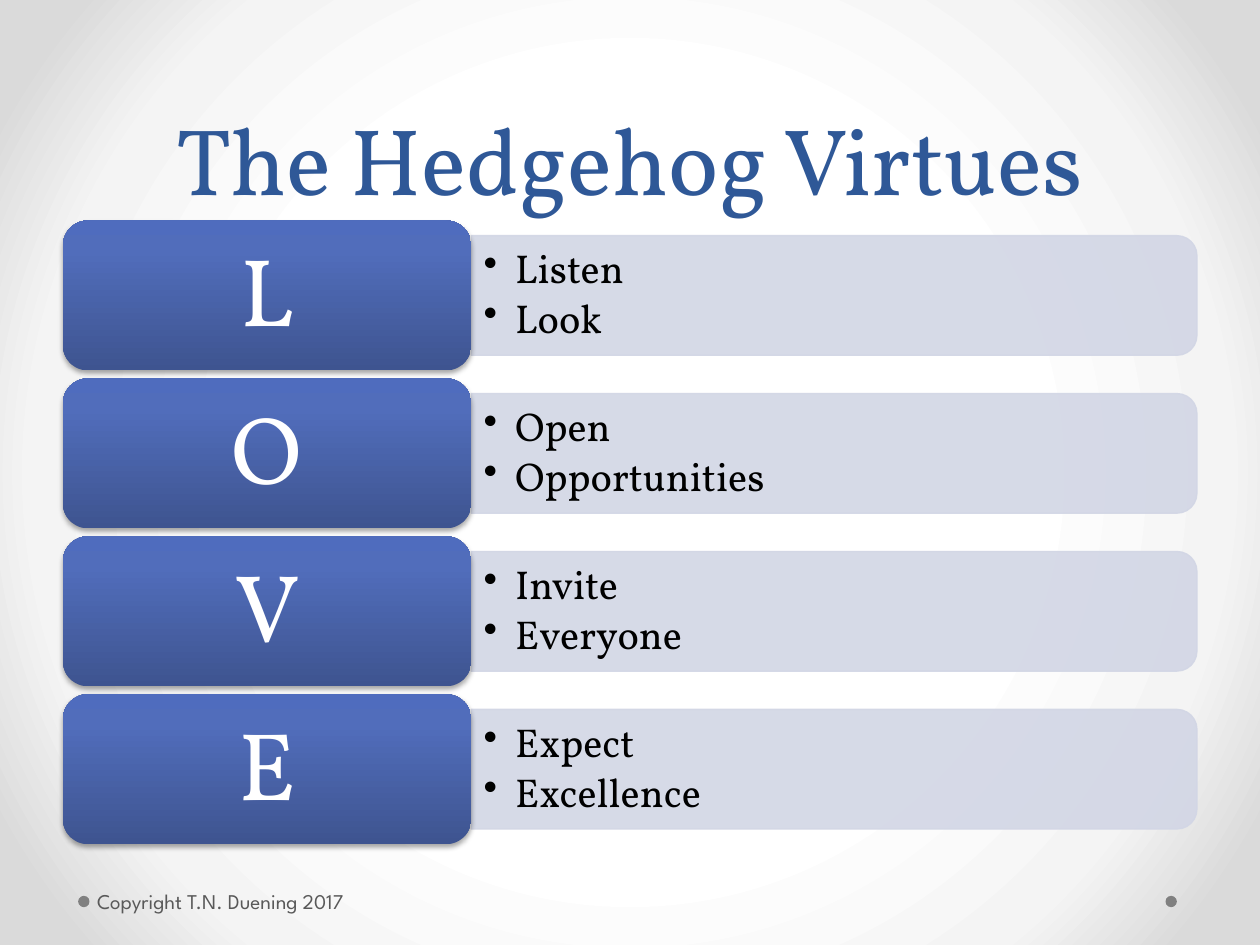
from pptx import Presentation
from pptx.dml.color import RGBColor
from pptx.enum.shapes import MSO_SHAPE as Shape
from pptx.enum.text import MSO_ANCHOR as Anchor, PP_ALIGN as Align
from pptx.oxml import parse_xml
from pptx.oxml.ns import nsdecls, qn
from pptx.util import Inches, Pt

THEME = {
    "serif": "Vollkorn", "sans": "League Spartan",
    "title": "2F5897", "letter": "FFFFFF", "word": "000000",
    "footer": "595959", "dot": "808080", "panel": "D2D6E5",
    "title_size": 54, "letter_size": 55, "word_size": 23, "footer_size": 12,
    "block_stops": [(0, "3E5490"), (80, "516DBB"), (100, "4F6CBE")],
    "back_stops": [(50, "FFFFFF"), (76, "F4F4F4"), (92, "DADADA")],
}
VIRTUES = {
    "L": ["Listen", "Look"],
    "O": ["Open", "Opportunities"],
    "V": ["Invite", "Everyone"],
    "E": ["Expect", "Excellence"],
}


def set_gradient(fill, owner, stops, direction):
    """Give the first fill inside owner any stops and a linear or path direction."""
    fill.gradient()
    gradient = owner.find(".//" + qn("a:gradFill"))
    stop_xml = "".join(
        f'<a:gs pos="{pos * 1000}"><a:srgbClr val="{color}"/></a:gs>' for pos, color in stops)
    gradient.getparent().replace(gradient, parse_xml(
        f'<a:gradFill {nsdecls("a")} rotWithShape="1"><a:gsLst>{stop_xml}</a:gsLst>'
        f'{direction}</a:gradFill>'))


def write(frame, lines, role, face, insets, anchor, align=Align.LEFT, **spacing):
    """Fill a text frame, one paragraph a line, in the theme's style for the role."""
    frame.word_wrap = True
    frame.vertical_anchor = anchor
    for side, inset in zip(("left", "top", "right", "bottom"), insets):
        setattr(frame, f"margin_{side}", Inches(inset))
    for number, line in enumerate(lines):
        paragraph = frame.add_paragraph() if number else frame.paragraphs[0]
        paragraph.alignment = align
        for name, value in spacing.items():
            setattr(paragraph, name, value)
        run = paragraph.add_run()
        run.text = line
        run.font.name = THEME[face]
        run.font.size = Pt(THEME[f"{role}_size"])
        run.font.color.rgb = RGBColor.from_string(THEME[role])


deck = Presentation()
deck.slide_width, deck.slide_height = Inches(10), Inches(7.5)
slide = deck.slides.add_slide(deck.slide_layouts[5])
shapes = slide.shapes
set_gradient(slide.background.fill, slide.element, THEME["back_stops"],
             '<a:path path="circle"><a:fillToRect l="50000" t="50000" r="50000" b="50000"/></a:path>')

for dot_left in (9.25, 0.62):
    dot = shapes.add_shape(Shape.OVAL, Inches(dot_left), Inches(7.11), Inches(0.09), Inches(0.09))
    dot.shadow.inherit = False
    dot.fill.solid()
    dot.fill.fore_color.rgb = RGBColor.from_string(THEME["dot"])
    dot.line.fill.background()

title = shapes.title
title.left, title.top, title.width, title.height = Inches(0.5), 0, Inches(9), Inches(1.75)
write(title.text_frame, ["The Hedgehog Virtues"], "title", "serif", (0.1, 0.05, 0.1, 0.05),
      Anchor.BOTTOM, Align.CENTER, line_spacing=Pt(58))

first_top, last_top = 1.75, 5.51
pitch = (last_top - first_top) / (len(VIRTUES) - 1)
block_left, block_width, block_height = 0.5, 3.24, 1.19
panel_left, panel_length, panel_depth = block_left + block_width, 5.76, 0.95

for row, (letter, words) in enumerate(VIRTUES.items()):
    top = first_top + row * pitch
    middle = top + block_height / 2

    # The panel stands upright before its quarter turn.
    panel = shapes.add_shape(
        Shape.ROUND_2_SAME_RECTANGLE,
        Inches(panel_left + (panel_length - panel_depth) / 2), Inches(middle - panel_length / 2),
        Inches(panel_depth), Inches(panel_length))
    panel.rotation = 90
    panel.shadow.inherit = False
    panel.line.width = Pt(0.75)
    for paint in (panel.fill, panel.line.fill):
        paint.solid()
        paint.fore_color.rgb = RGBColor.from_string(THEME["panel"])
    for color in panel.element.spPr.iter(qn("a:srgbClr")):
        color.append(parse_xml(f'<a:alpha {nsdecls("a")} val="90000"/>'))

    meaning = shapes.add_textbox(Inches(panel_left), Inches(middle - 0.43), Inches(5.71), Inches(0.86))
    write(meaning.text_frame, words, "word", "serif", (0.1, 0.05, 0.1, 0.05), Anchor.MIDDLE,
          line_spacing=0.9, space_after=Pt(4))
    for paragraph in meaning.text_frame.paragraphs:
        properties = paragraph._p.get_or_add_pPr()
        properties.set("marL", str(Inches(0.25)))
        properties.set("indent", str(Inches(-0.25)))
        properties.append(parse_xml(f'<a:buChar {nsdecls("a")} char="•"/>'))

    block = shapes.add_shape(Shape.ROUNDED_RECTANGLE, Inches(block_left), Inches(top),
                             Inches(block_width), Inches(block_height))
    set_gradient(block.fill, block.element, THEME["block_stops"], '<a:lin ang="16200000" scaled="0"/>')
    block.line.fill.background()
    block.element.spPr.append(parse_xml(
        f'<a:effectLst {nsdecls("a")}><a:outerShdw blurRad="{Pt(3.1)}" dist="{Pt(1.8)}" '
        'dir="5400000" rotWithShape="0"><a:srgbClr val="000000"><a:alpha val="35000"/>'
        '</a:srgbClr></a:outerShdw></a:effectLst>'))
    write(block.text_frame, [letter], "letter", "serif", (0.23, 0.11, 0.23, 0.11), Anchor.MIDDLE,
          Align.CENTER, line_spacing=0.9, space_after=Pt(19))

footer = shapes.add_textbox(Inches(0.72), Inches(6.95), Inches(3.11), Inches(0.4))
write(footer.text_frame, ["Copyright T.N. Duening 2017"], "footer", "sans",
      (0.05, 0.05, 0.1, 0.05), Anchor.MIDDLE)

deck.save("out.pptx")
